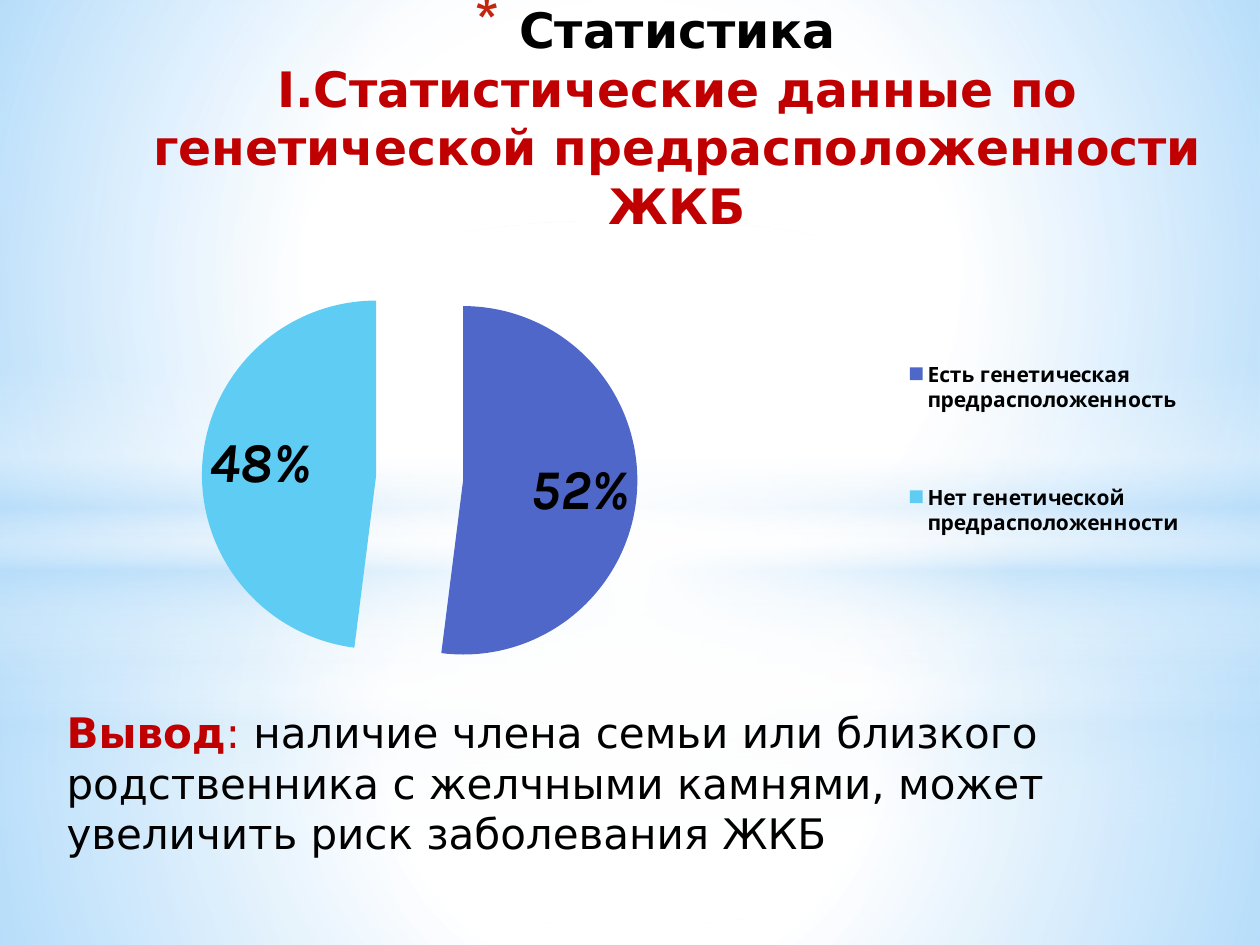
from copy import deepcopy

from lxml import etree
from pptx import Presentation
from pptx import util as u
from pptx.chart import data as cd
from pptx.dml.color import RGBColor
from pptx.enum import chart as ch
from pptx.enum import shapes, text
from pptx.oxml.ns import qn

BLACK = RGBColor(0x00, 0x00, 0x00)
RED = RGBColor(0xC0, 0x00, 0x00)
STAR_RED = RGBColor(0xC3, 0x26, 0x0C)
INDIGO = RGBColor(0x4E, 0x67, 0xC8)
SKY = RGBColor(0x5E, 0xCC, 0xF3)
WHITE = RGBColor(0xFF, 0xFF, 0xFF)
PALE = RGBColor(0xB4, 0xDC, 0xFA)
FONT = "DejaVu Sans"
CHART_FONT = "Karla"

BAND = [(0, WHITE, 0), (29, WHITE, 30), (45, PALE, 40),
        (55, WHITE, 26), (65, PALE, 60), (100, WHITE, 0)]


def add(parent, tag, **attrs):
    return etree.SubElement(parent, qn(tag), {k: str(v) for k, v in attrs.items()})


def set_format(obj, **values):
    for name, value in values.items():
        setattr(obj, name, value)


def format_font(font, color, **values):
    set_format(font, **values)
    font.color.rgb = color


def box_of(left, top, width, height):
    return [u.Inches(v) for v in (left, top, width, height)]


def add_glow(s, kind, box, stops, radial=True):
    sp = s.shapes.add_shape(kind, *box_of(*box))
    sp.shadow.inherit = False
    sp.line.fill.background()
    grad = etree.Element(qn("a:gradFill"), rotWithShape="1")
    gs_list = add(grad, "a:gsLst")
    for pos, color, alpha in stops:
        gs = add(gs_list, "a:gs", pos=pos * 1000)
        add(add(gs, "a:srgbClr", val=color), "a:alpha", val=alpha * 1000)
    if radial:
        circle = add(grad, "a:path", path="circle")
        add(circle, "a:fillToRect", l=50000, t=50000, r=50000, b=50000)
    else:
        add(grad, "a:lin", ang=90 * 60000, scaled=0)
    sp._element.spPr.find(qn("a:prstGeom")).addnext(grad)


def add_sky(s, width, height, horizon, band_top, shift, halo):
    rect, oval = shapes.MSO_SHAPE.RECTANGLE, shapes.MSO_SHAPE.OVAL
    ground = [(0, WHITE, 91 + shift), (37, WHITE, 76 + shift), (100, PALE, 79 + shift)]
    air = [(0, WHITE, 89 + shift), (48, WHITE, 62 + shift), (100, PALE, 79 + shift)]
    add_glow(s, rect, (0, horizon, width, height - horizon), ground)
    add_glow(s, rect, (0, 0, width, horizon), air)
    add_glow(s, rect, (0, band_top, width, 2.5), BAND, radial=False)
    add_glow(s, oval, (0, 1.75, width, 5.58), [(0, WHITE, 100), (halo, WHITE, 0)])


def add_title(s, box):
    sp = s.shapes.title
    s.shapes._spTree.append(sp._element)
    set_format(sp, **dict(zip(("left", "top", "width", "height"), box_of(*box))))
    tf = sp.text_frame
    set_format(tf, word_wrap=True, auto_size=text.MSO_AUTO_SIZE.NONE,
               vertical_anchor=text.MSO_ANCHOR.BOTTOM, margin_bottom=u.Inches(1.42))
    p = tf.paragraphs[0]
    p.alignment = text.PP_ALIGN.CENTER
    pPr = p._p.get_or_add_pPr()
    pPr.set("marL", str(u.Inches(0.35)))
    pPr.set("indent", str(u.Inches(-0.35)))
    add(add(pPr, "a:buClr"), "a:srgbClr", val=STAR_RED)
    add(pPr, "a:buSzPct", val=128000)
    add(pPr, "a:buChar", char="*")
    look = dict(name=FONT, size=u.Pt(27.9), bold=True)
    r = p.add_run()
    r.text = "Статистика"
    format_font(r.font, BLACK, **look)
    p.add_line_break()
    p._p.find(qn("a:br")).append(deepcopy(r._r.rPr))
    r = p.add_run()
    r.text = "I.Статистические данные по генетической предрасположенности ЖКБ"
    format_font(r.font, RED, **look)


def add_conclusion(s, box):
    tf = s.shapes.add_textbox(*box_of(*box)).text_frame
    tf.word_wrap = True
    p = tf.paragraphs[0]
    for words, color, bold in (
            ("Вывод", RED, True),
            (": ", RED, False),
            ("наличие члена семьи или близкого родственника с желчными камнями, "
             "может увеличить риск заболевания ЖКБ", BLACK, False)):
        r = p.add_run()
        r.text = words
        format_font(r.font, color, name=FONT, size=u.Pt(24), bold=bold)


def set_layout(element, after, x, y, w, h, inner=False):
    for old in element.findall(qn("c:layout")):
        element.remove(old)
    layout = etree.Element(qn("c:layout"))
    manual = add(layout, "c:manualLayout")
    if inner:
        add(manual, "c:layoutTarget", val="inner")
    for tag in ("c:xMode", "c:yMode"):
        add(manual, tag, val="edge")
    for tag, value in zip(("c:x", "c:y", "c:w", "c:h"), (x, y, w, h)):
        add(manual, tag, val=value)
    if after is None:
        element.insert(0, layout)
    else:
        after.addnext(layout)


def add_pie(s, box):
    data = cd.CategoryChartData(number_format="0%")
    data.categories = ["Есть генетическая предрасположенность",
                       "Нет генетической предрасположенности"]
    data.add_series("Series 1", (0.52, 0.48))
    chart = s.shapes.add_chart(ch.XL_CHART_TYPE.PIE, *box_of(*box), data).chart
    set_format(chart, has_title=False, has_legend=True)
    format_font(chart.font, BLACK, name=CHART_FONT, size=u.Pt(10))
    legend = chart.legend
    set_format(legend, position=ch.XL_LEGEND_POSITION.RIGHT, include_in_layout=False)
    format_font(legend.font, BLACK, name=CHART_FONT, size=u.Pt(12), bold=True)
    set_layout(legend._element, legend._element.find(qn("c:legendPos")),
               0.72, 0.17, 0.24, 0.63)
    set_layout(chart._chartSpace.chart.plotArea, None, 0.07, 0.11, 0.61, 0.86, inner=True)

    plot = chart.plots[0]
    plot.vary_by_categories = True
    series = plot.series[0]
    for i, color in enumerate((INDIGO, SKY)):
        fill = series.points[i].format.fill
        fill.solid()
        fill.fore_color.rgb = color
    explosion = etree.Element(qn("c:explosion"), val="25")
    series._element.find(qn("c:tx")).addnext(explosion)
    labels = series.data_labels
    set_format(labels, show_value=True, show_percentage=False, number_format="0%",
               number_format_is_linked=False, position=ch.XL_LABEL_POSITION.INSIDE_END)
    format_font(labels.font, BLACK, name=CHART_FONT, size=u.Pt(32), bold=True, italic=True)


def main():
    prs = Presentation()
    set_format(prs, slide_width=u.Inches(10), slide_height=u.Inches(7.5))
    s = prs.slides.add_slide(prs.slide_layouts[5])
    add_sky(s, 10, 7.5, horizon=5.58, band_top=4.12, shift=0, halo=56)
    add_sky(s, 10, 7.5, horizon=4.23, band_top=2.9, shift=1, halo=54)
    add_title(s, (0.4, 0.76, 9.6, 2.52))
    add_conclusion(s, (0.43, 5.56, 8.43, 1.31))
    add_pie(s, (-0.67, 1.62, 10.67, 4.02))
    prs.save("out.pptx")


if __name__ == "__main__":
    main()
